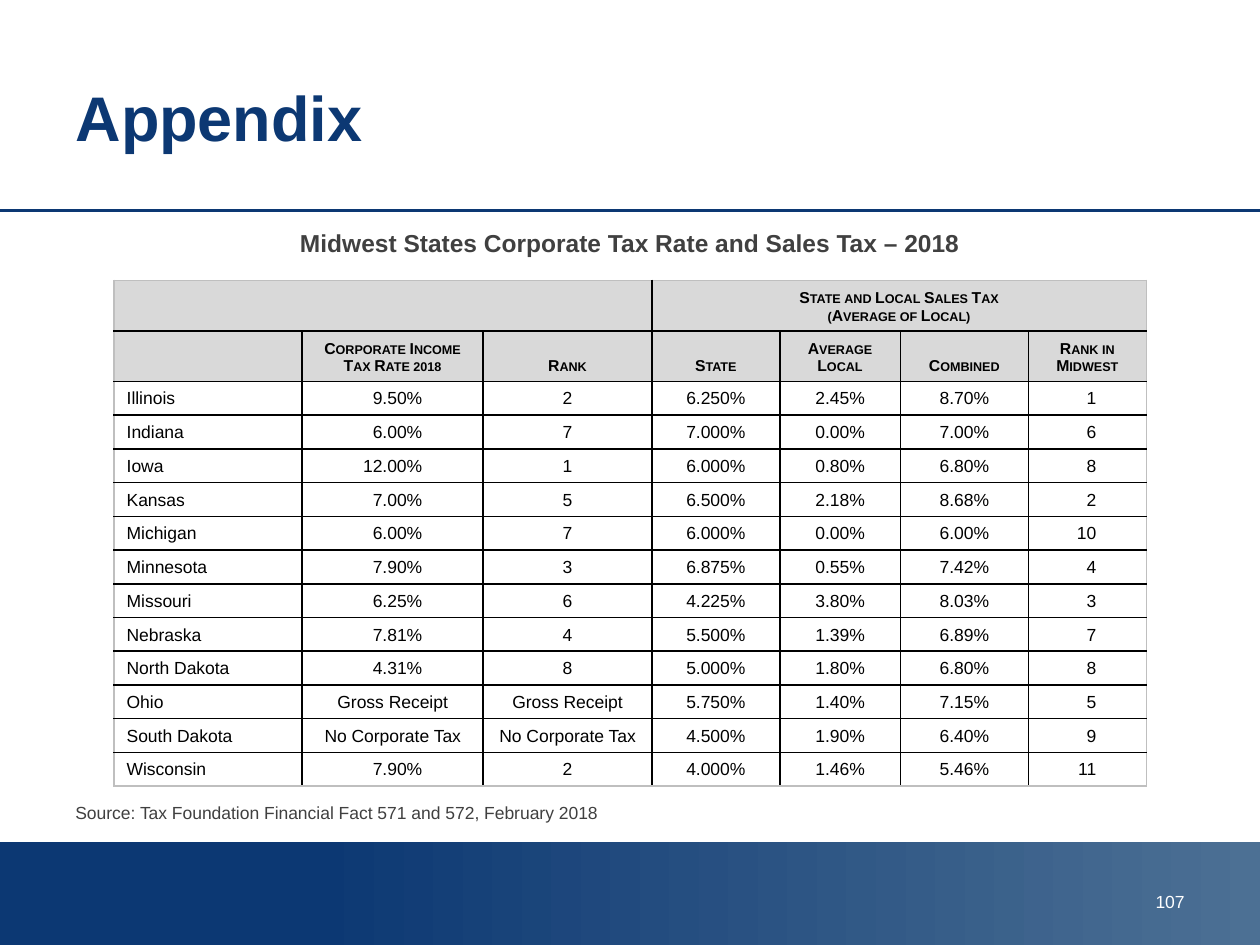
"""Build the appendix slide with Midwest corporate and sales tax rates."""
from dataclasses import dataclass

from lxml.etree import SubElement
from pptx import Presentation
from pptx.dml.color import RGBColor
from pptx.enum.shapes import MSO_CONNECTOR, MSO_SHAPE
from pptx.enum.text import MSO_ANCHOR, PP_ALIGN
from pptx.oxml.ns import qn
from pptx.util import Cm, Pt


@dataclass(frozen=True)
class Theme:
    """Colours, font and type sizes of the slide."""
    font: str = "Arial"
    navy: str = "0C3873"
    haze: str = "4C7094"
    grey: str = "404040"
    black: str = "000000"
    white: str = "FFFFFF"
    header: str = "D9D9D9"
    edge: str = "BFBFBF"
    title: int = 36
    caption: int = 14
    body: int = 10
    head: int = 9


THEME = Theme()
TITLE = "Appendix"
CAPTION = "Midwest States Corporate Tax Rate and Sales Tax – 2018"
SOURCE = "Source: Tax Foundation Financial Fact 571 and 572, February 2018"
PAGE = "107"
HEADERS = [
    ["", "", "", "State and Local Sales Tax\v(Average of Local)", "", "", ""],
    ["", "Corporate Income\vTax Rate 2018", "Rank", "State", "Average\vLocal",
     "Combined", "Rank in\vMidwest"],
]
STATES = [
    ["Illinois", "9.50%", "2", "6.250%", "2.45%", "8.70%", "1"],
    ["Indiana", "6.00%", "7", "7.000%", "0.00%", "7.00%", "6"],
    ["Iowa", "12.00%", "1", "6.000%", "0.80%", "6.80%", "8"],
    ["Kansas", "7.00%", "5", "6.500%", "2.18%", "8.68%", "2"],
    ["Michigan", "6.00%", "7", "6.000%", "0.00%", "6.00%", "10"],
    ["Minnesota", "7.90%", "3", "6.875%", "0.55%", "7.42%", "4"],
    ["Missouri", "6.25%", "6", "4.225%", "3.80%", "8.03%", "3"],
    ["Nebraska", "7.81%", "4", "5.500%", "1.39%", "6.89%", "7"],
    ["North Dakota", "4.31%", "8", "5.000%", "1.80%", "6.80%", "8"],
    ["Ohio", "Gross Receipt", "Gross Receipt", "5.750%", "1.40%", "7.15%", "5"],
    ["South Dakota", "No Corporate Tax", "No Corporate Tax", "4.500%", "1.90%",
     "6.40%", "9"],
    ["Wisconsin", "7.90%", "2", "4.000%", "1.46%", "5.46%", "11"],
]
COLUMN_WIDTHS = [3.79, 3.65, 3.4, 2.58, 2.43, 2.58, 2.38]
HEADER_SPANS = [(0, 2), (3, 6)]
RIGHT_INSETS = {1: 1.23, 6: 1.01}
HEADER_HEIGHT, STATE_HEIGHT = 0.97, 0.68


def rgb(colour):
    """Return a colour object for a hex string."""
    return RGBColor.from_string(colour)


def style(frame, size, colour, align=PP_ALIGN.LEFT, bold=False):
    """Format every paragraph and run of a text frame."""
    for paragraph in frame.paragraphs:
        paragraph.alignment = align
        for run in paragraph.runs:
            run.font.name = THEME.font
            run.font.size = Pt(size)
            run.font.bold = bold
            run.font.color.rgb = rgb(colour)


def add_text(slide, text, left, top, width, height, *look):
    """Add a wrapped text box."""
    frame = slide.shapes.add_textbox(Cm(left), Cm(top), Cm(width), Cm(height)).text_frame
    frame.word_wrap = True
    frame.text = text
    style(frame, *look)


def add_frame(slide):
    """Add the footer band and the rule below the title."""
    band = slide.shapes.add_shape(MSO_SHAPE.RECTANGLE, 0, Cm(16.98), Cm(25.4), Cm(2.07))
    band.shadow.inherit = False
    band.line.fill.background()
    band.fill.gradient()
    band.fill.gradient_angle = 0
    stops = [(0.25, THEME.navy), (1, THEME.haze)]
    for stop, (position, colour) in zip(band.fill.gradient_stops, stops):
        stop.position = position
        stop.color.rgb = rgb(colour)
    rule = slide.shapes.add_connector(MSO_CONNECTOR.STRAIGHT, 0, Cm(4.24), Cm(25.4), Cm(4.24))
    rule.line.color.rgb = rgb(THEME.navy)
    rule.line.width = Pt(2)
    SubElement(rule.element.spPr, qn("a:effectLst"))


def add_borders(cell, outer_sides):
    """Draw grey borders on the table's outside and black ones within."""
    for side in ("L", "R", "T", "B"):
        line = SubElement(cell._tc.get_or_add_tcPr(), qn(f"a:ln{side}"), w=str(Pt(1)))
        fill = SubElement(line, qn("a:solidFill"))
        colour = THEME.edge if side in outer_sides else THEME.black
        SubElement(fill, qn("a:srgbClr"), val=colour)


def fill_header(cell, text):
    """Write a small-caps column heading."""
    cell.vertical_anchor = MSO_ANCHOR.BOTTOM
    if not text:
        cell.margin_top = cell.margin_bottom = 0
        return
    cell.text = text
    style(cell.text_frame, THEME.head, THEME.black, PP_ALIGN.CENTER, True)
    for run in cell.text_frame.paragraphs[0].runs:
        run.font._element.set("cap", "small")


def fill_state(cell, text, column):
    """Write a state name or one of its values."""
    cell.text = text
    align = PP_ALIGN.CENTER if column else PP_ALIGN.LEFT
    if column in RIGHT_INSETS and text[0].isdigit():
        align = PP_ALIGN.RIGHT
        cell.margin_right = Cm(RIGHT_INSETS[column])
    style(cell.text_frame, THEME.body, THEME.black, align)
    cell.text_frame.paragraphs[0].line_spacing = Pt(12)


def add_tax_table(slide):
    """Add the table of tax rates by state."""
    content = HEADERS + STATES
    heights = [HEADER_HEIGHT] * len(HEADERS) + [STATE_HEIGHT] * len(STATES)
    table = slide.shapes.add_table(
        len(content), len(COLUMN_WIDTHS), Cm(2.3), Cm(5.65),
        Cm(sum(COLUMN_WIDTHS)), Cm(sum(heights))).table
    table.first_row = table.horz_banding = False
    for column, width in zip(table.columns, COLUMN_WIDTHS):
        column.width = Cm(width)
    for row, height in zip(table.rows, heights):
        row.height = Cm(height)
    for first, last in HEADER_SPANS:
        table.cell(0, first).merge(table.cell(0, last))
    for r, values in enumerate(content):
        for c, text in enumerate(values):
            cell = table.cell(r, c)
            is_header = r < len(HEADERS)
            edges = {"L": c == 0, "R": c + cell.span_width == len(values),
                     "T": r == 0, "B": r == len(content) - 1}
            add_borders(cell, [side for side, outer in edges.items() if outer])
            cell.fill.solid()
            cell.fill.fore_color.rgb = rgb(THEME.header if is_header else THEME.white)
            if is_header:
                fill_header(cell, text)
            else:
                fill_state(cell, text, c)


def main():
    """Build and save the slide."""
    deck = Presentation()
    deck.slide_width, deck.slide_height = Cm(25.4), Cm(19.05)
    slide = deck.slides.add_slide(deck.slide_layouts[5])
    add_frame(slide)
    title = slide.shapes.title
    title.left, title.top, title.width, title.height = Cm(1.27), Cm(0.76), Cm(22.86), Cm(3.18)
    title.text_frame.text = TITLE
    title.text_frame.vertical_anchor = MSO_ANCHOR.MIDDLE
    style(title.text_frame, THEME.title, THEME.navy, PP_ALIGN.LEFT, True)
    add_text(slide, CAPTION, 1.27, 4.48, 22.86, 0.85,
             THEME.caption, THEME.grey, PP_ALIGN.CENTER, True)
    add_tax_table(slide)
    add_text(slide, SOURCE, 1.27, 16.04, 22.86, 0.7, THEME.body, THEME.grey)
    add_text(slide, PAGE, 18.2, 17.83, 5.93, 1.02, THEME.body, THEME.white, PP_ALIGN.RIGHT)
    deck.save("out.pptx")


if __name__ == "__main__":
    main()
